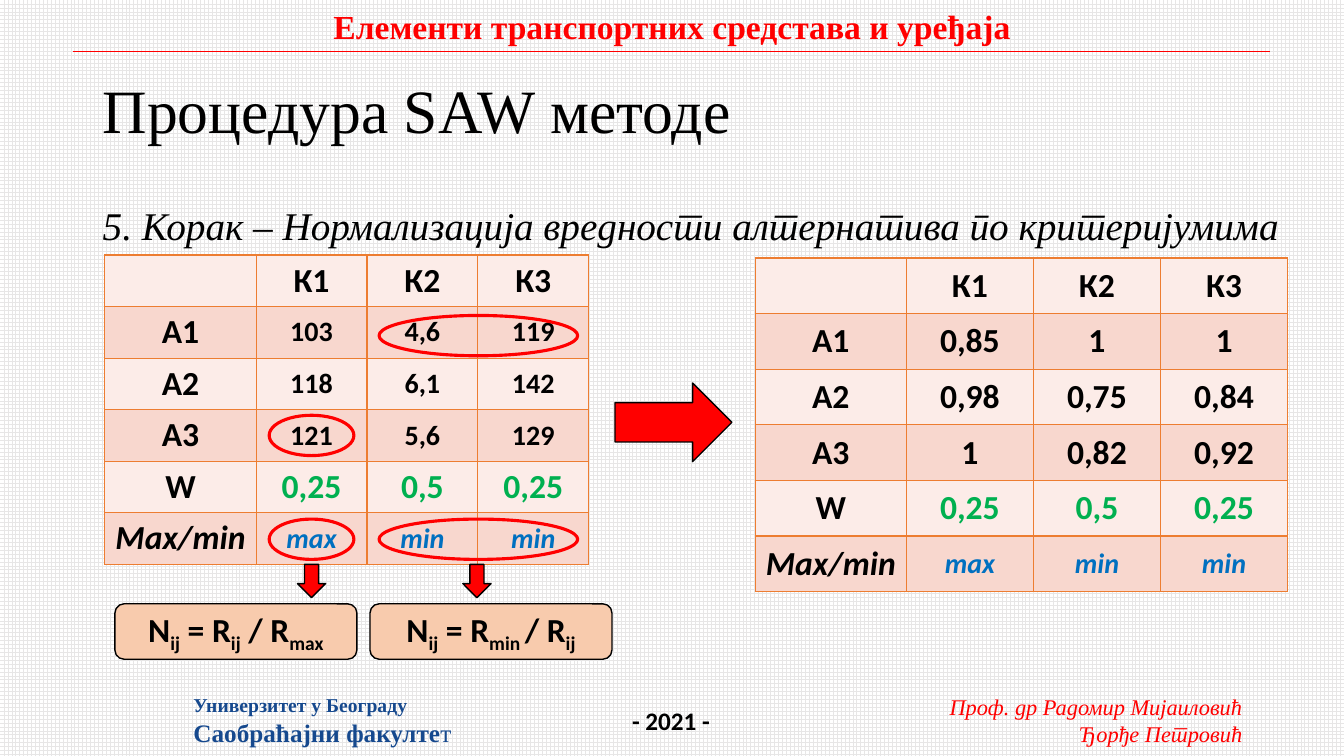
"""Builds the slide on the normalization step of the SAW method."""
from dataclasses import dataclass

from lxml import etree
from pptx import Presentation
from pptx.dml.color import RGBColor
from pptx.enum.dml import MSO_PATTERN
from pptx.enum.shapes import MSO_CONNECTOR, MSO_SHAPE
from pptx.enum.text import MSO_ANCHOR as ANCHOR, PP_ALIGN as ALIGN
from pptx.oxml.ns import qn
from pptx.util import Inches, Pt

SERIF, SANS = "Times New Roman", "Calibri"
COLORS = {
    "red": "FF0000", "black": "000000", "white": "FFFFFF", "grid": "E7E6E6",
    "navy": "16498E", "green": "00B050", "blue": "0070C0", "border": "ED7D31",
    "light": "FCECE8", "dark": "F8D7CE", "formula": "F8CBAD",
}


@dataclass(frozen=True)
class Style:
    size: float
    color: str = "black"
    font: str = SANS
    bold: bool = False
    italic: bool = False
    baseline: int = 0


@dataclass(frozen=True)
class Label:
    box: tuple
    lines: tuple
    align: ALIGN = ALIGN.LEFT
    anchor: ANCHOR = ANCHOR.TOP
    wrap: bool = False
    spacing: float = 1.0


@dataclass(frozen=True)
class Matrix:
    box: tuple
    value_size: int
    values: tuple


@dataclass(frozen=True)
class Figure:
    kind: MSO_SHAPE
    box: tuple
    fill: str = ""
    line: str = "black"
    width: float = 1
    terms: tuple = ()


def rgb(name: str) -> RGBColor:
    return RGBColor.from_string(COLORS[name])


def add_run(p, text: str, style: Style) -> None:
    r = p.add_run()
    r.text = text
    f = r.font
    f.size, f.name, f.bold, f.italic = Pt(style.size), style.font, style.bold, style.italic
    f.color.rgb = rgb(style.color)
    rpr = r._r.get_or_add_rPr()
    rpr.set("lang", "sr-Cyrl-RS")
    if style.baseline:
        rpr.set("baseline", str(style.baseline * 1000))


def add_label(s, label: Label) -> None:
    tf = s.shapes.add_textbox(*map(Inches, label.box)).text_frame
    tf.word_wrap, tf.vertical_anchor = label.wrap, label.anchor
    for i, line in enumerate(label.lines):
        p = tf.add_paragraph() if i else tf.paragraphs[0]
        p.alignment, p.line_spacing = label.align, label.spacing
        for text, style in line:
            add_run(p, text, style)


def add_borders(cell) -> None:
    tc_pr = cell._tc.get_or_add_tcPr()
    for i, side in enumerate(("a:lnL", "a:lnR", "a:lnT", "a:lnB")):
        ln = etree.Element(qn(side), w=str(Pt(1)))
        fill = etree.SubElement(ln, qn("a:solidFill"))
        etree.SubElement(fill, qn("a:srgbClr"), val=COLORS["border"])
        tc_pr.insert(i, ln)


def cell_style(row: int, col: int, value_size: int) -> Style:
    if row == 5:
        return Style(20 if col else 24, "blue" if col else "black", bold=True, italic=True)
    if row == 4 and col:
        return Style(24, "green", bold=True)
    return Style(value_size if row and col else 24, bold=True)


def add_matrix(s, matrix: Matrix) -> None:
    rows = (("", "К1", "К2", "К3"), *matrix.values,
            ("W", "0,25", "0,5", "0,25"), ("Max/min", "max", "min", "min"))
    width, height = matrix.box[2:]
    table = s.shapes.add_table(len(rows), 4, *map(Inches, matrix.box)).table
    for i, column in enumerate(table.columns):
        column.width = Inches((width - 1.5) / 3 if i else 1.5)
    for i, row in enumerate(rows):
        table.rows[i].height = Inches(height / len(rows))
        for j, text in enumerate(row):
            cell = table.cell(i, j)
            cell.fill.solid()
            cell.fill.fore_color.rgb = rgb("dark" if i % 2 else "light")
            cell.vertical_anchor = ANCHOR.MIDDLE
            add_borders(cell)
            if text:
                p = cell.text_frame.paragraphs[0]
                p.alignment = ALIGN.CENTER
                add_run(p, text, cell_style(i, j, matrix.value_size))


def add_figure(s, figure: Figure) -> None:
    sp = s.shapes.add_shape(figure.kind, *map(Inches, figure.box))
    sp.shadow.inherit = False
    if figure.fill:
        sp.fill.solid()
        sp.fill.fore_color.rgb = rgb(figure.fill)
    else:
        sp.fill.background()
    sp.line.color.rgb, sp.line.width = rgb(figure.line), Pt(figure.width)
    if figure.terms:
        tf = sp.text_frame
        tf.vertical_anchor = ANCHOR.MIDDLE
        p = tf.paragraphs[0]
        p.alignment = ALIGN.CENTER
        for i, text in enumerate(figure.terms):
            add_run(p, text, Style(24, bold=True, baseline=-25 if i % 2 else 0))


def add_header_rule(s) -> None:
    line = s.shapes.add_connector(
        MSO_CONNECTOR.STRAIGHT, *map(Inches, (0.72, 0.51, 12.6, 0.51)))
    line.line.color.rgb, line.line.width = rgb("red"), Pt(0.5)
    etree.SubElement(line._element.spPr, qn("a:effectLst"))


def ring(x: float, y: float, w: float) -> Figure:
    return Figure(MSO_SHAPE.OVAL, (x, y, w, 0.4), line="red", width=2.25)


def down_arrow(x: float) -> Figure:
    return Figure(MSO_SHAPE.DOWN_ARROW, (x, 5.6, 0.28, 0.33), "red")


def formula(x: float, *terms: str) -> Figure:
    return Figure(MSO_SHAPE.ROUNDED_RECTANGLE, (x, 5.99, 2.4, 0.55), "formula", terms=terms)


AUTHOR = Style(16, "red", SERIF, italic=True)
FACULTY = Style(18, "navy", SERIF, bold=True)
LABELS = (
    Label((9.22, 6.83, 3.2, 0.64), ((("Проф. др Радомир Мијаиловић", AUTHOR),),
                                    (("Ђорђе Петровић", AUTHOR),)), ALIGN.RIGHT),
    Label((3.17, 0.01, 6.99, 0.5), ((("Елементи транспортних средстава и уређаја",
                                      Style(24, "red", SERIF, bold=True)),),), ALIGN.CENTER),
    Label((6.17, 6.95, 0.98, 0.4), ((("- 2021 -", Style(18, bold=True)),),)),
    Label((1.82, 6.83, 2.79, 0.64), (
        (("Универзитет у Београду", Style(14, "navy", SERIF, bold=True)),),
        (("Саобраћајни факулте", FACULTY), ("т", Style(18, "navy", SERIF))))),
    Label((0.92, 0.4, 11.5, 1.45), ((("Процедура SAW методе", Style(44, font=SERIF)),),),
          anchor=ANCHOR.MIDDLE, wrap=True, spacing=0.9),
    Label((0.92, 2, 11.89, 4.76),
          ((("5. Корак – Нормализација вредности алтернатива по критеријумима",
             Style(28, font=SERIF, italic=True)),),), wrap=True, spacing=0.9),
)
MATRICES = (
    Matrix((1.04, 2.53, 4.8, 3.07), 20, (
        ("А1", "103", "4,6", "119"), ("А2", "118", "6,1", "142"), ("А3", "121", "5,6", "129"))),
    Matrix((7.49, 2.56, 5.28, 3.31), 24, (
        ("А1", "0,85", "1", "1"), ("А2", "0,98", "0,75", "0,84"), ("А3", "1", "0,82", "0,92"))),
)
FIGURES = (
    down_arrow(2.95), down_arrow(4.59),
    ring(2.67, 5.15, 0.84), ring(2.67, 4.12, 0.84),
    ring(3.76, 5.15, 1.97), ring(3.76, 3.13, 1.97),
    formula(1.14, "N", "ij", " = R", "ij", " / R", "max"),
    formula(3.67, "N", "ij", " = R", "min ", "/ R", "ij"),
    Figure(MSO_SHAPE.RIGHT_ARROW, (6.1, 3.8, 1.16, 0.78), "red"),
)


def main() -> None:
    prs = Presentation()
    prs.slide_width, prs.slide_height = Inches(13.33), Inches(7.5)
    s = prs.slides.add_slide(prs.slide_layouts[6])
    fill = s.background.fill
    fill.patterned()
    fill.pattern = MSO_PATTERN.LARGE_GRID
    fill.fore_color.rgb, fill.back_color.rgb = rgb("grid"), rgb("white")
    add_header_rule(s)
    for label in LABELS:
        add_label(s, label)
    for matrix in MATRICES:
        add_matrix(s, matrix)
    for figure in FIGURES:
        add_figure(s, figure)
    prs.save("out.pptx")


if __name__ == "__main__":
    main()
